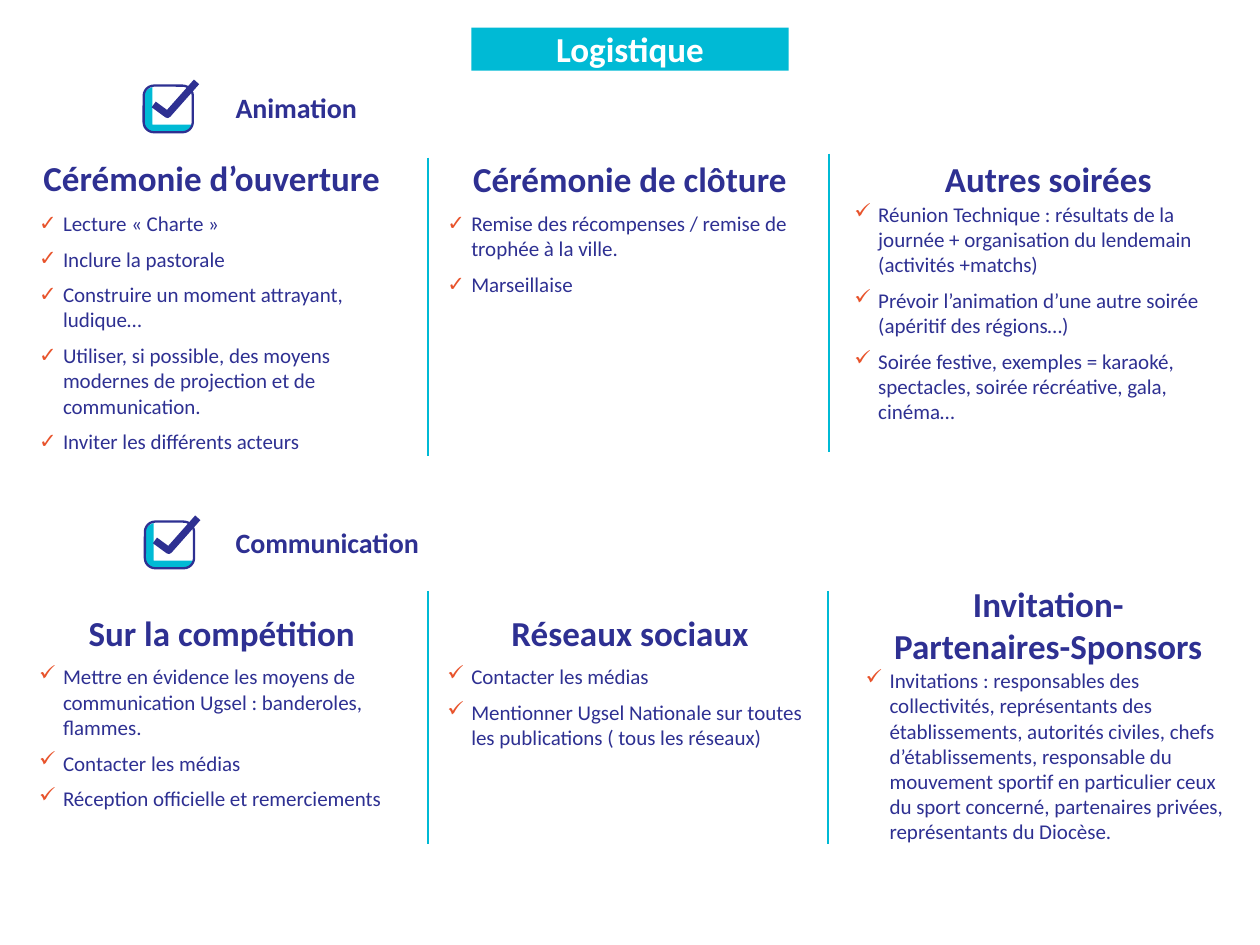
import pptx
import pptx.util
import pptx.dml.color
import pptx.enum.shapes
import pptx.enum.text
import pptx.oxml.ns
from lxml import etree

COLORS = {"navy": "2E3092", "cyan": "00BAD5", "orange": "E8532B", "white": "FFFFFF"}
FONT = "Calibri"
COLUMN_LEFT, COLUMN_STEP, COLUMN_WIDTH = 0.22, 3.32, 2.92

SECTIONS = [
    {
        "label": "Animation", "icon": (1.14, 0.68), "label_top": 0.72,
        "dividers": [(3.4, 1.25), (6.58, 1.22)], "divider_length": 2.37,
        "columns": [
            {"heading": "Cérémonie d’ouverture", "center": 1.68, "top": 1.24,
             "list_at": (0.3, 1.66), "list_height": 1.97,
             "items": ["Lecture «\u00a0Charte\u00a0»", "Inclure la pastorale",
                       "Construire un moment attrayant, ludique…",
                       "Utiliser, si possible, des moyens modernes de projection et de communication.",
                       "Inviter les différents acteurs"]},
            {"heading": "Cérémonie de clôture", "center": 5, "top": 1.25,
             "list_at": (3.54, 1.66), "list_height": 0.7,
             "items": ["Remise des récompenses / remise de trophée à la ville.", "Marseillaise"]},
            {"heading": "Autres soirées", "center": 8.32, "top": 1.25,
             "list_at": (6.77, 1.59), "list_height": 1.8,
             "items": ["Réunion Technique : résultats de la journée + organisation du lendemain (activités +matchs)",
                       "Prévoir l’animation d’une autre soirée (apéritif des régions…)",
                       "Soirée festive, exemples = karaoké, spectacles, soirée récréative, gala, cinéma…"]},
        ],
    },
    {
        "label": "Communication", "icon": (1.15, 4.14), "label_top": 4.17,
        "dividers": [(3.4, 4.69), (6.57, 4.69)], "divider_length": 2.01,
        "columns": [
            {"heading": "Sur la compétition", "center": 1.76, "top": 4.85,
             "list_at": (0.3, 5.26), "list_height": 1.19,
             "items": ["Mettre en évidence les moyens de communication Ugsel : banderoles, flammes.",
                       "Contacter les médias", "Réception officielle et remerciements"]},
            {"heading": "Réseaux sociaux", "center": 5, "top": 4.85,
             "list_at": (3.54, 5.26), "list_height": 0.7,
             "items": ["Contacter les médias",
                       "Mentionner Ugsel Nationale sur toutes les publications ( tous les réseaux)"]},
            {"heading": "Invitation-Partenaires-Sponsors", "center": 8.32, "top": 4.62,
             "width": 2.46, "height": 0.67, "list_at": (6.86, 5.29), "list_height": 1.43,
             "items": ["Invitations : responsables des collectivités, représentants des établissements, "
                       "autorités civiles, chefs d’établissements, responsable du mouvement sportif en "
                       "particulier ceux du sport concerné, partenaires privées, représentants du Diocèse."]},
        ],
    },
]

ICON_SHADE = [(7, 1), (3, 3), (0, 7), (0, 33), (2, 35), (6, 37), (34, 37), (38, 34), (39, 31), (7, 31)]
ICON_TICK = [(8, 15), (19, 23), (42, -3)]
inch = pptx.util.Inches


def rgb(name):
    return pptx.dml.color.RGBColor.from_string(COLORS[name])


def place(box, left, top, width, height):
    box.left, box.top, box.width, box.height = map(inch, (left, top, width, height))


def add_bullet(para):
    properties = para._p.get_or_add_pPr()
    properties.set("marL", str(inch(0.2)))
    properties.set("indent", str(-inch(0.19)))
    tag = pptx.oxml.ns.qn
    color = etree.SubElement(properties, tag("a:buClr"))
    etree.SubElement(color, tag("a:srgbClr"), val=COLORS["orange"])
    etree.SubElement(properties, tag("a:buChar"), char="✓")


def write(box, lines, size, color="navy", bold=True, centered=False, bulleted=False, indent=0):
    frame = box.text_frame
    frame.word_wrap = True
    frame.auto_size = pptx.enum.text.MSO_AUTO_SIZE.NONE
    frame.vertical_anchor = pptx.enum.text.MSO_ANCHOR.TOP
    frame.margin_left = inch(indent)
    frame.margin_right = frame.margin_bottom = 0
    frame.margin_top = inch(0.01 if bulleted else 0)
    align = pptx.enum.text.PP_ALIGN
    for index, line in enumerate(lines):
        para = frame.paragraphs[0] if index == 0 else frame.add_paragraph()
        para.text = line
        if bulleted:
            add_bullet(para)
        para.alignment = align.CENTER if centered else align.LEFT
        para.space_before = pptx.util.Pt(6 if index else 0)
        para.font.name = FONT
        para.font.size = pptx.util.Pt(size)
        para.font.bold = bold
        para.font.color.rgb = rgb(color)


def set_line(shape, color, width):
    shape.line.color.rgb = rgb(color)
    shape.line.width = pptx.util.Pt(width)


def add_outline(shapes, points, left, top, close):
    builder = shapes.build_freeform(*points[0], scale=inch(0.01))
    builder.add_line_segments(points[1:], close=close)
    outline = builder.convert_to_shape(inch(left), inch(top))
    outline.shadow.inherit = False
    return outline


def add_checkbox(slide, left, top):
    shapes = slide.shapes.add_group_shape().shapes
    shade = add_outline(shapes, ICON_SHADE, left, top, True)
    shade.fill.solid()
    shade.fill.fore_color.rgb = rgb("cyan")
    shade.line.fill.background()
    frame = shapes.add_shape(pptx.enum.shapes.MSO_SHAPE.ROUNDED_RECTANGLE,
                             inch(left), inch(top), inch(0.39), inch(0.37))
    frame.adjustments[0] = 0.22
    frame.shadow.inherit = False
    frame.fill.background()
    set_line(frame, "navy", 1.3)
    tick = add_outline(shapes, ICON_TICK, left, top, False)
    tick.fill.background()
    set_line(tick, "navy", 4)


def add_divider(slide, x, top, length):
    line = slide.shapes.add_connector(pptx.enum.shapes.MSO_CONNECTOR.STRAIGHT,
                                      inch(x), inch(top), inch(x), inch(top + length))
    set_line(line, "cyan", 1.25)
    etree.SubElement(line._element.spPr, pptx.oxml.ns.qn("a:effectLst"))


def main():
    deck = pptx.Presentation()
    deck.slide_width, deck.slide_height = inch(10), inch(7.5)
    slide = deck.slides.add_slide(deck.slide_layouts.get_by_name("Comparison"))
    title = slide.shapes.title
    place(title, 3.74, 0.22, 2.52, 0.34)
    title.fill.solid()
    title.fill.fore_color.rgb = rgb("cyan")
    write(title, ["Logistique"], 20, color="white", centered=True)

    bodies = [item for item in slide.placeholders if 1 <= item.placeholder_format.idx <= 4]
    for extra in [item for item in slide.placeholders if item.placeholder_format.idx > 4]:
        extra._element.getparent().remove(extra._element)

    def next_box(*bounds):
        box = bodies.pop(0) if bodies else slide.shapes.add_textbox(0, 0, 0, 0)
        place(box, *bounds)
        return box

    for section in SECTIONS:
        for column in section["columns"]:
            width = column.get("width", COLUMN_WIDTH)
            heading = next_box(column["center"] - width / 2, column["top"],
                               width, column.get("height", 0.34))
            write(heading, [column["heading"]], 20, centered=True)
            items = next_box(*column["list_at"], COLUMN_WIDTH, column["list_height"])
            write(items, column["items"], 12, bold=False, bulleted=True)
        for x, top in section["dividers"]:
            add_divider(slide, x, top, section["divider_length"])
        add_checkbox(slide, *section["icon"])
        label = slide.shapes.add_textbox(0, 0, 0, 0)
        place(label, 1.76, section["label_top"], 2.3, 0.27)
        write(label, [section["label"]], 16, indent=0.11)
    deck.save("out.pptx")


if __name__ == "__main__":
    main()
